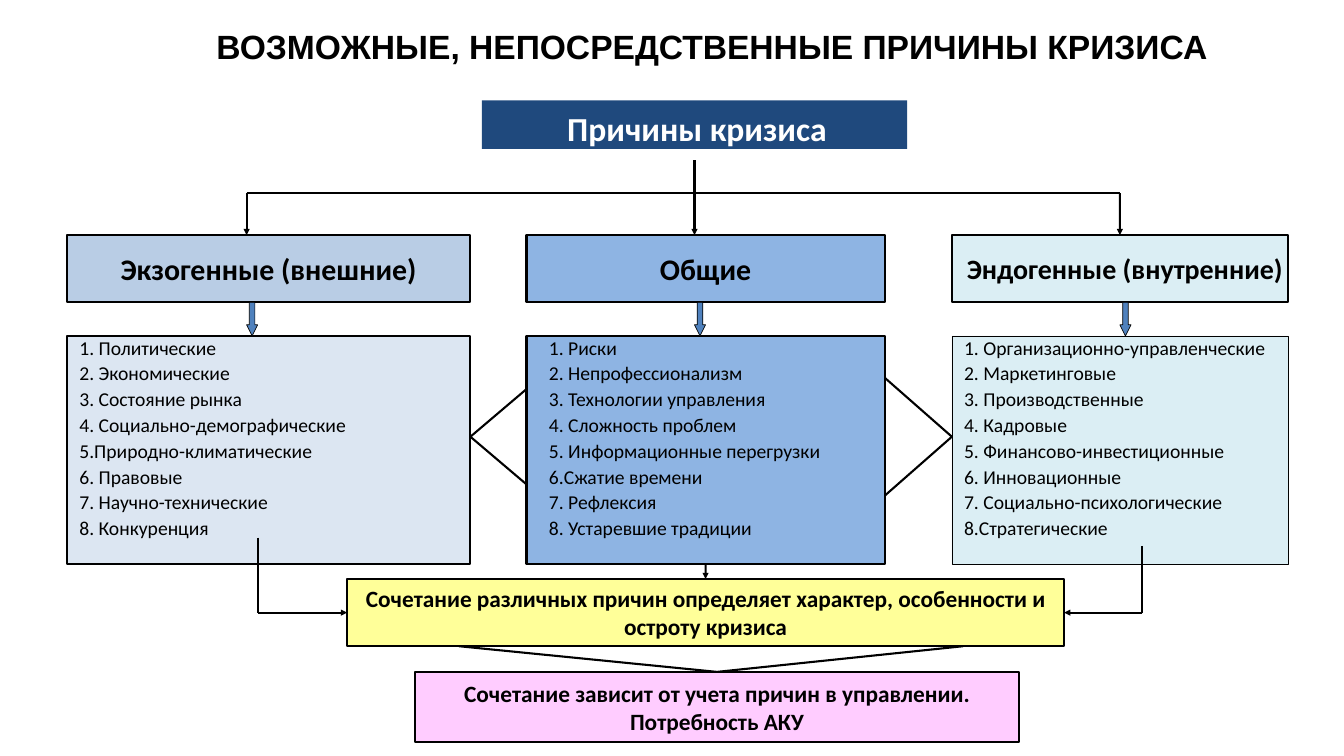
import pptx
import pptx.util
import pptx.dml.color
import pptx.enum.shapes
import pptx.enum.text
import pptx.oxml
import pptx.oxml.ns

Cm = pptx.util.Cm
Pt = pptx.util.Pt
SHAPE = pptx.enum.shapes.MSO_SHAPE
ALIGN = pptx.enum.text.PP_ALIGN
ANCHOR = pptx.enum.text.MSO_ANCHOR

COLORS = {
    "black": "000000", "white": "FFFFFF", "navy": "1F497D", "arrow": "4F81BD",
    "steel": "B9CDE5", "mist": "DCE6F2", "sky": "8EB4E3", "aqua": "DBEEF4",
    "yellow": "FFFF99", "pink": "FFCCFF",
}


def color(name):
    return pptx.dml.color.RGBColor.from_string(COLORS[name])


def write(frame, lines, size=21, font="Calibri", ink="black", bold=False,
          align=ALIGN.CENTER, anchor=ANCHOR.MIDDLE, spacing=None, before=0,
          insets=(0.46, 0, 0.46, 0)):
    """Fill a text frame; insets are left, top, right, bottom in cm."""
    frame.word_wrap = True
    frame.vertical_anchor = anchor
    frame.margin_left, frame.margin_top, frame.margin_right, frame.margin_bottom = map(Cm, insets)
    for number, line in enumerate(lines):
        para = frame.add_paragraph() if number else frame.paragraphs[0]
        para.alignment = align
        if spacing:
            para.line_spacing = spacing
        if number:
            para.space_before = Pt(before)
        span = para.add_run()
        span.text = line
        span.font.name = font
        span.font.size = Pt(size)
        span.font.bold = bold
        span.font.color.rgb = color(ink)


class Diagram:
    line_width = 2.25

    def __init__(self, slide):
        self.shapes = slide.shapes

    def text(self, left, top, width, height, lines, **style):
        box = self.shapes.add_textbox(Cm(left), Cm(top), Cm(width), Cm(height))
        write(box.text_frame, lines, **style)

    def block(self, left, top, width, height, fill, lines=(), kind=SHAPE.RECTANGLE,
              line=line_width, **style):
        box = self.shapes.add_shape(kind, Cm(left), Cm(top), Cm(width), Cm(height))
        box.shadow.inherit = False
        box.fill.solid()
        box.fill.fore_color.rgb = color(fill)
        if line:
            box.line.color.rgb = color("black")
            box.line.width = Pt(line)
        else:
            box.line.fill.background()
        if lines:
            write(box.text_frame, lines, **style)
        return box

    def down_arrow(self, left, top, width, height):
        arrow = self.block(left, top, width, height, "arrow", kind=SHAPE.DOWN_ARROW, line=0.75)
        arrow.adjustments[0] = 0.5
        arrow.adjustments[1] = 1

    def line(self, start, end, head=False, source=None, target=None):
        """Draw a line; source and target are (box, side) pairs to join."""
        link = self.shapes.add_connector(
            pptx.enum.shapes.MSO_CONNECTOR.STRAIGHT, *map(Cm, (*start, *end)))
        link.line.color.rgb = color("black")
        link.line.width = Pt(self.line_width)
        if head:
            link.line._get_or_add_ln().append(pptx.oxml.parse_xml(
                '<a:tailEnd type="triangle" %s/>' % pptx.oxml.ns.nsdecls("a")))
        link._element.spPr.append(pptx.oxml.parse_xml(
            "<a:effectLst %s/>" % pptx.oxml.ns.nsdecls("a")))
        if source:
            link.begin_connect(*source)
        if target:
            link.end_connect(*target)


# Left, width, header fill, header size, header insets, list fill, list line, list inset, stem x
COLUMNS = [
    (2.54, 15.24, "steel", 32, (0.46, 0, 0.46, 0), "mist", 2.25, 0.46, 9.32,
     "Экзогенные (внешние)",
     ["1. Политические", "2. Экономические", "3. Состояние рынка",
      "4. Социально-демографические", "5.Природно-климатические",
      "6. Правовые", "7. Научно-технические", "8. Конкуренция"]),
    (19.9, 13.54, "sky", 32, (0.46, 0, 0.46, 0), "sky", 2.25, 0.85, 26.25,
     "Общие",
     ["1. Риски", "2. Непрофессионализм", "3. Технологии управления",
      "4. Сложность проблем", "5. Информационные перегрузки",
      "6.Сжатие времени", "7. Рефлексия", "8. Устаревшие традиции"]),
    (35.98, 12.7, "aqua", 30, (0.46, 0, 0.08, 0), "aqua", 0.75, 0.46, 42.33,
     "Эндогенные (внутренние)",
     ["1. Организационно-управленческие", "2. Маркетинговые",
      "3. Производственные", "4. Кадровые", "5. Финансово-инвестиционные",
      "6. Инновационные", "7. Социально-психологические", "8.Стратегические"]),
]
HEADER_TOP, HEADER_HEIGHT = 8.89, 2.54
LIST_TOP, LIST_HEIGHT = 12.7, 8.64
BUS_Y = 7.3


def main():
    deck = pptx.Presentation()
    deck.slide_width, deck.slide_height = Cm(50.8), Cm(28.58)
    page = Diagram(deck.slides.add_slide(deck.slide_layouts[6]))

    # Title and root of the tree
    page.text(6.6, 0.74, 40.64, 2, ["ВОЗМОЖНЫЕ, НЕПОСРЕДСТВЕННЫЕ ПРИЧИНЫ КРИЗИСА"],
              size=36, font="Arial", bold=True)
    page.block(18.21, 3.8, 16.08, 1.83, "navy", ["Причины кризиса"], line=None,
               size=36, ink="white", bold=True, insets=(0.66, 0.25, 0.46, 0))

    # Columns: header, list and the block arrow between them
    headers, lists = [], []
    for (left, width, head_fill, size, insets, list_fill, edge, indent, stem,
         heading, causes) in COLUMNS:
        headers.append(page.block(left, HEADER_TOP, width, HEADER_HEIGHT, head_fill, [heading],
                                  size=size, bold=True, insets=insets))
        lists.append(page.block(left, LIST_TOP, width, LIST_HEIGHT, list_fill, causes, line=edge,
                                align=ALIGN.LEFT, anchor=ANCHOR.TOP, spacing=0.7, before=10,
                                insets=(indent, 0.23, 0.1, 0.23)))
        bottom = HEADER_TOP + HEADER_HEIGHT
        page.down_arrow(stem, bottom, 0.42, LIST_TOP - bottom)

    # Conclusions
    result = page.block(13.12, 21.89, 27.1, 2.54, "yellow",
                        ["Сочетание различных причин определяет характер, особенности и остроту кризиса"],
                        size=25, bold=True)
    need = page.block(15.67, 25.4, 22.86, 2.64, "pink",
                      ["Сочетание зависит от учета причин в управлении. Потребность АКУ"],
                      size=25, bold=True)

    # Branches from the root to the headers
    left_x, middle_x, right_x = (column[8] for column in COLUMNS)
    page.line((left_x, BUS_Y), (right_x, BUS_Y))
    page.line((left_x, BUS_Y), (left_x, HEADER_TOP), head=True)
    page.line((middle_x, 6.05), (middle_x, HEADER_TOP), head=True)
    page.line((right_x, BUS_Y), (right_x, HEADER_TOP), head=True, target=(headers[2], 0))

    # Wedges between neighbouring lists
    for base_x, tip_x, half in ((19.9, 17.78, 1.8), (33.44, 35.98, 2.23)):
        for offset in (-half, half):
            page.line((base_x, 16.51 + offset), (tip_x, 16.51))

    # Lists lead to the first conclusion
    page.line((26.67, 21.34), (26.67, 21.89), head=True,
              source=(lists[1], 2), target=(result, 0))
    for x, top, edge, side in ((9.74, 20.32, 13.12, 1), (43.18, 20.64, 40.22, 3)):
        page.line((x, top), (x, 23.16))
        page.line((x, 23.16), (edge, 23.16), head=True, target=(result, side))

    # Funnel to the second conclusion
    for x in (17.35, 36.4):
        page.line((x, 24.43), (27.1, 25.4), target=(need, 0))

    deck.save("out.pptx")


if __name__ == "__main__":
    main()
